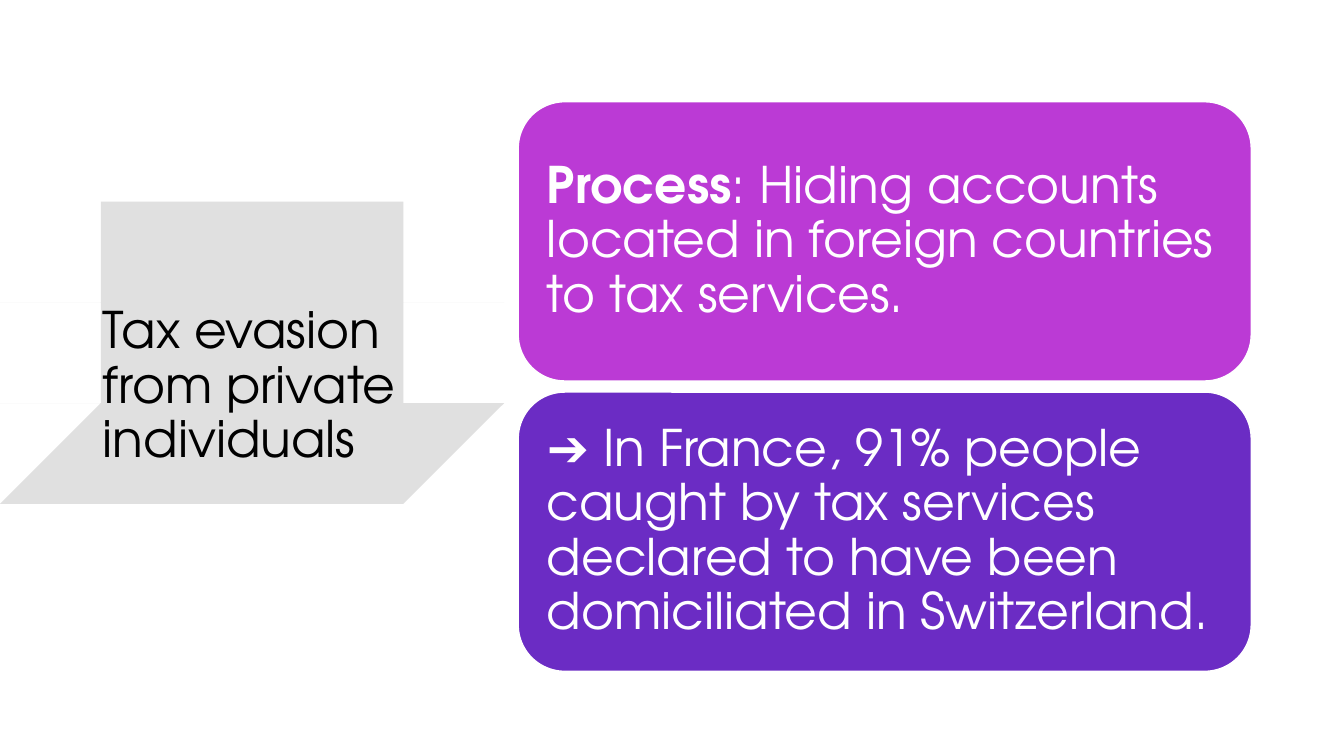
from lxml import etree
from pptx import Presentation
from pptx.dml.color import RGBColor
from pptx.enum import shapes, text
from pptx.oxml import ns
from pptx.util import Inches, Pt

# Content: each text is a list of (words, bold) runs
TITLE = [("Tax evasion from private individuals", False)]
CARDS = [
    ([("Process", True),
      (": Hiding accounts located in foreign countries to tax services.", False)], "process"),
    ([("➔ In France, 91% people caught by tax services declared to have been "
       "domiciliated in Switzerland.", False)], "france"),
]

THEME = {
    "font": "TeX Gyre Adventor", "size": 36,
    "process": "BB3AD5", "france": "6B2CC4", "brush": "D9D9D9",
    "ink": "000000", "paper": "FFFFFF",
}
BRUSH_OPACITY = 80

# Outline of the brush stroke, in inches, clockwise from the top
BRUSH = [
    (2.59, 2.31), (3.85, 2.34), (4.4, 2.43), (3.98, 2.6), (4.27, 2.67),
    (4.6, 2.93), (4.65, 3.06), (4.5, 3.41), (4.5, 3.73), (4.57, 3.83),
    (4.51, 4.07), (4.64, 4.3), (4.42, 4.51), (4.3, 5.04), (4.12, 5.2),
    (2.89, 5.36), (2.02, 5.26), (1.26, 5.04), (0.47, 4.88), (1.08, 4.61),
    (0.27, 4.55), (0.56, 4.27), (0.66, 4.08), (0.18, 4.08), (0.44, 3.93),
    (0.62, 3.79), (0.53, 3.68), (0.94, 3.56), (1.01, 3.32), (0.27, 3.33),
    (0.66, 3.22), (0.36, 3.17), (0.48, 3.03), (1.07, 2.73), (1.54, 2.63),
    (1.13, 2.56), (1.41, 2.44),
]

# Layout, in inches
TITLE_BOX = (0.92, 1.64, 3.52, 4.4)
CARD_LEFT, CARD_TOP, CARD_WIDTH, CARD_HEIGHT = 5.14, 1.01, 7.27, 2.77
CARD_GAP = 0.11


def color(role):
    return RGBColor.from_string(THEME[role])


def write(shape, runs, ink, side_inset, top_inset):
    frame = shape.text_frame
    frame.word_wrap = True
    frame.vertical_anchor = text.MSO_ANCHOR.MIDDLE
    frame.margin_left = frame.margin_right = Inches(side_inset)
    frame.margin_top = frame.margin_bottom = Inches(top_inset)
    paragraph = frame.paragraphs[0]
    paragraph.alignment = text.PP_ALIGN.LEFT
    paragraph.line_spacing = 0.9
    for words, bold in runs:
        run = paragraph.add_run()
        run.text = words
        run.font.name = THEME["font"]
        run.font.size = Pt(THEME["size"])
        run.font.bold = bold
        run.font.color.rgb = color(ink)


def paint(shape, role):
    shape.shadow.inherit = False
    shape.fill.solid()
    shape.fill.fore_color.rgb = color(role)


deck = Presentation()
deck.slide_width, deck.slide_height = Inches(13.33), Inches(7.5)
slide = deck.slides.add_slide(deck.slide_layouts[6])

# Brush stroke behind the title
outline = slide.shapes.build_freeform(*BRUSH[0], scale=Inches(1))
outline.add_line_segments(BRUSH[1:], close=True)
brush = outline.convert_to_shape()
paint(brush, "brush")
brush.line.fill.background()
brush_color = brush.element.spPr.find(".//" + ns.qn("a:srgbClr"))
etree.SubElement(brush_color, ns.qn("a:alpha"), val=str(BRUSH_OPACITY * 1000))

# Title
title = slide.shapes.add_textbox(*map(Inches, TITLE_BOX))
write(title, TITLE, ink="ink", side_inset=0.1, top_inset=0.05)

# Cards, stacked
for row, (runs, role) in enumerate(CARDS):
    top = CARD_TOP + row * (CARD_HEIGHT + CARD_GAP)
    card = slide.shapes.add_shape(
        shapes.MSO_SHAPE.ROUNDED_RECTANGLE,
        *map(Inches, (CARD_LEFT, top, CARD_WIDTH, CARD_HEIGHT)))
    paint(card, role)
    card.line.color.rgb = color("paper")
    card.line.width = Pt(1)
    write(card, runs, ink="paper", side_inset=0.15, top_inset=0.15)

deck.save("out.pptx")
